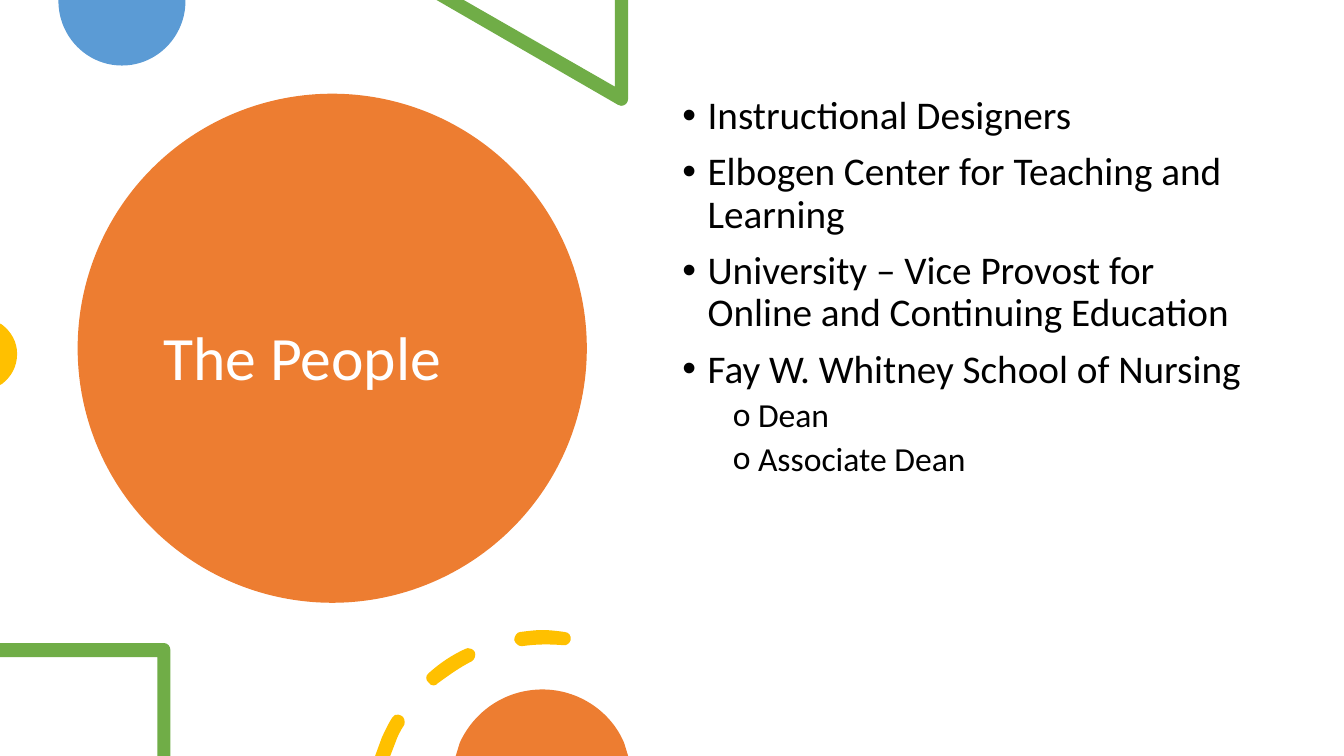
from dataclasses import dataclass

import lxml.etree
import pptx
import pptx.dml.color
import pptx.enum.shapes
import pptx.enum.text
import pptx.oxml.ns
import pptx.util

Inches = pptx.util.Inches
qn = pptx.oxml.ns.qn
COLORS = {
    "orange": "ED7D31",
    "blue": "5B9BD5",
    "green": "70AD47",
    "gold": "FFC000",
    "white": "FFFFFF",
    "black": "000000",
}
FONT = "Calibri"

# A pair is a straight segment; six numbers are two control points and an end.
Segment = tuple[float, ...]
Contour = list[Segment]


@dataclass
class Outline:
    color: str
    contours: list[Contour]


@dataclass
class Bullet:
    text: str
    level: int = 0


@dataclass
class BulletStyle:
    mark: str
    mark_font: str
    size: float
    indent: float
    space_before: float


BULLET_STYLES = [
    BulletStyle("•", "Arial", 28, 0.25, 10),
    BulletStyle("o", FONT, 24, 0.75, 5),
]
BULLETS = [
    Bullet("Instructional Designers"),
    Bullet("Elbogen Center for Teaching and Learning"),
    Bullet("University – Vice Provost for Online and Continuing Education"),
    Bullet("Fay W. Whitney School of Nursing"),
    Bullet("Dean", 1),
    Bullet("Associate Dean", 1),
]

BLUE_DISC = Outline("blue", [[
    (1.84, 0), (0.58, 0), (0.58, 0.01),
    (0.58, 0.36, 0.86, 0.65, 1.21, 0.65), (1.56, 0.65, 1.84, 0.36, 1.84, 0.01),
]])
GREEN_TRIANGLE = Outline("green", [[
    (6.23, 0), (6.1, 0), (6.1, 0.86), (4.6, 0), (4.33, 0), (6.13, 1.04),
    (6.14, 1.05, 6.15, 1.05, 6.16, 1.05), (6.2, 1.05, 6.23, 1.02, 6.23, 0.98),
]])
GOLD_DISC = Outline("gold", [[
    (0, 3.21), (0, 3.82), (0.02, 3.81),
    (0.11, 3.74, 0.17, 3.64, 0.17, 3.51), (0.17, 3.39, 0.11, 3.29, 0.02, 3.22),
]])
GREEN_FRAME = Outline("green", [[
    (1.63, 6.38), (0, 6.38), (0, 6.52), (1.56, 6.52), (1.56, 7.5), (1.69, 7.5),
    (1.69, 6.45), (1.69, 6.41, 1.66, 6.38, 1.63, 6.38),
]])
GOLD_DASHES = Outline("gold", [
    [
        (3.95, 7.09), (3.93, 7.08, 3.9, 7.1, 3.89, 7.12),
        (3.85, 7.18, 3.82, 7.25, 3.79, 7.31), (3.72, 7.5), (3.87, 7.5),
        (3.92, 7.37), (3.94, 7.31, 3.97, 7.25, 4.01, 7.19),
        (4.02, 7.16, 4.01, 7.11, 3.98, 7.1), (3.97, 7.09, 3.96, 7.09, 3.95, 7.09),
    ],
    [
        (4.64, 6.43), (4.63, 6.43, 4.62, 6.43, 4.61, 6.44),
        (4.48, 6.5, 4.36, 6.58, 4.25, 6.68), (4.22, 6.7, 4.22, 6.75, 4.25, 6.77),
        (4.26, 6.79, 4.28, 6.8, 4.3, 6.8), (4.32, 6.8, 4.33, 6.79, 4.34, 6.78),
        (4.45, 6.7, 4.56, 6.62, 4.68, 6.56), (4.71, 6.54, 4.72, 6.5, 4.71, 6.47),
        (4.69, 6.44, 4.67, 6.43, 4.64, 6.43),
    ],
    [
        (5.38, 6.25), (5.31, 6.25, 5.24, 6.26, 5.16, 6.27),
        (5.13, 6.27, 5.1, 6.31, 5.1, 6.35), (5.11, 6.38, 5.14, 6.41, 5.17, 6.41),
        (5.18, 6.41), (5.32, 6.39, 5.45, 6.39, 5.58, 6.4),
        (5.62, 6.41, 5.65, 6.38, 5.66, 6.35), (5.67, 6.31, 5.64, 6.27, 5.6, 6.27),
        (5.53, 6.26, 5.45, 6.25, 5.38, 6.25),
    ],
])
ORANGE_DISC = Outline("orange", [[
    (5.38, 6.84), (5.01, 6.84, 4.7, 7.06, 4.56, 7.37), (4.52, 7.5), (6.23, 7.5),
    (6.19, 7.37), (6.06, 7.06, 5.74, 6.84, 5.38, 6.84),
]])
BACK_OUTLINES = [BLUE_DISC, GREEN_TRIANGLE, GOLD_DISC]
FRONT_OUTLINES = [GREEN_FRAME, GOLD_DASHES, ORANGE_DISC]


def rgb(color: str) -> pptx.dml.color.RGBColor:
    return pptx.dml.color.RGBColor.from_string(COLORS[color])


def paint(shape, color: str) -> None:
    """Give a flat fill with no line and no shadow."""
    shape.shadow.inherit = False
    shape.fill.solid()
    shape.fill.fore_color.rgb = rgb(color)
    shape.line.fill.background()


def segment_points(segment: Segment) -> list[tuple[int, int]]:
    return [(Inches(x), Inches(y)) for x, y in zip(segment[::2], segment[1::2])]


def bend_curves(shape, contours: list[Contour]) -> None:
    """Join the three line steps of each curved segment into one cubic curve."""
    steps = iter(list(next(shape._element.iter(qn("a:path")))))
    for contour in contours:
        next(steps)  # move
        for segment in contour[1:]:
            lines = [next(steps) for _ in segment[::2]]
            if len(lines) == 1:
                continue
            lines[0].tag = qn("a:cubicBezTo")
            for line in lines[1:]:
                lines[0].append(line[0])
                line.getparent().remove(line)
        next(steps)  # close


def draw_outline(page, outline: Outline) -> None:
    builder = page.shapes.build_freeform(*segment_points(outline.contours[0][0])[0])
    for index, contour in enumerate(outline.contours):
        if index:
            builder.move_to(*segment_points(contour[0])[0])
        points = [point for segment in contour[1:] for point in segment_points(segment)]
        builder.add_line_segments(points, close=True)
    shape = builder.convert_to_shape()
    bend_curves(shape, outline.contours)
    paint(shape, outline.color)


def add_frame(page, left: float, top: float, width: float, height: float, anchor):
    box = page.shapes.add_textbox(Inches(left), Inches(top), Inches(width), Inches(height))
    box.text_frame.word_wrap = True
    box.text_frame.vertical_anchor = anchor
    return box.text_frame


def write(para, text: str, *, size: float, color: str, space_before: float = 0) -> None:
    para.line_spacing = 0.9
    para.space_before = pptx.util.Pt(space_before)
    span = para.add_run()
    span.text = text
    span.font.name = FONT
    span.font.size = pptx.util.Pt(size)
    span.font.color.rgb = rgb(color)


def set_bullet(para, style: BulletStyle) -> None:
    properties = para._p.get_or_add_pPr()
    properties.set("marL", str(Inches(style.indent)))
    properties.set("indent", str(Inches(-0.25)))
    lxml.etree.SubElement(properties, qn("a:buFont")).set("typeface", style.mark_font)
    lxml.etree.SubElement(properties, qn("a:buChar")).set("char", style.mark)


def main() -> None:
    deck = pptx.Presentation()
    deck.slide_width, deck.slide_height = Inches(13.33), Inches(7.5)
    page = deck.slides.add_slide(deck.slide_layouts[6])
    anchors = pptx.enum.text.MSO_ANCHOR

    circle = page.shapes.add_shape(
        pptx.enum.shapes.MSO_SHAPE.OVAL, Inches(0.77), Inches(0.93), Inches(5.05), Inches(5.05)
    )
    paint(circle, "orange")
    title = add_frame(page, 1.52, 1.35, 3.54, 4.45, anchors.MIDDLE)
    write(title.paragraphs[0], "The People", size=44, color="white")
    for outline in BACK_OUTLINES:
        draw_outline(page, outline)

    body = add_frame(page, 6.67, 0.9, 5.75, 5.35, anchors.TOP)
    for index, bullet in enumerate(BULLETS):
        para = body.paragraphs[0] if index == 0 else body.add_paragraph()
        style = BULLET_STYLES[bullet.level]
        para.level = bullet.level
        write(para, bullet.text, size=style.size, color="black", space_before=style.space_before)
        set_bullet(para, style)
    for outline in FRONT_OUTLINES:
        draw_outline(page, outline)

    deck.save("out.pptx")


if __name__ == "__main__":
    main()
